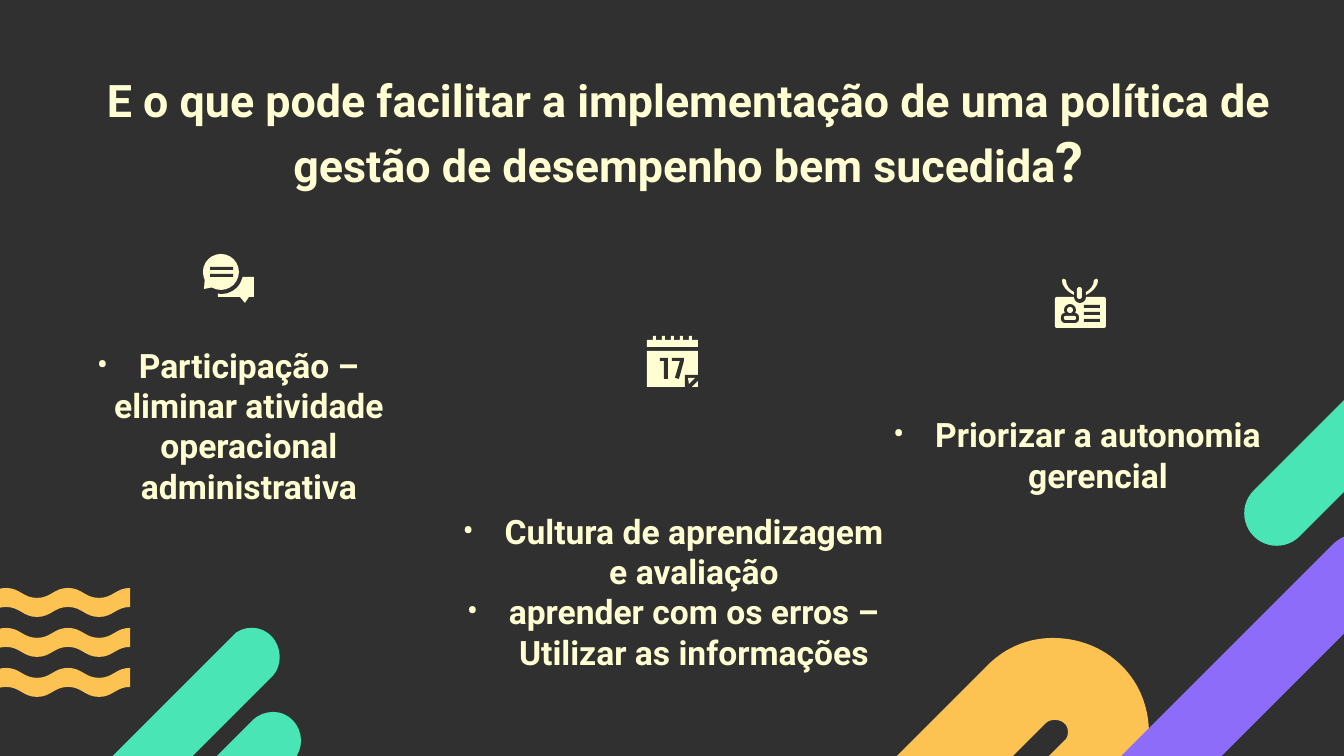
from dataclasses import dataclass

from lxml.etree import SubElement
from pptx import Presentation
from pptx.dml.color import RGBColor
from pptx.enum.shapes import MSO_SHAPE
from pptx.enum.text import MSO_ANCHOR, PP_ALIGN
from pptx.oxml.ns import qn
from pptx.util import Pt

EMU_PER_PX = 914400 / 134.4
DARK, CREAM = "303030", "FFFED2"
YELLOW, PURPLE, GREEN = "FCC353", "8D6CFA", "49E5B5"
FONT = "Roboto"
OVAL, ROUND = MSO_SHAPE.OVAL, MSO_SHAPE.ROUNDED_RECTANGLE
BAR = MSO_SHAPE.ROUND_2_SAME_RECTANGLE
Contour = list[tuple[int, ...]]


@dataclass
class Block:
    preset: MSO_SHAPE
    left: int
    top: int
    width: int
    height: int
    color: str = CREAM
    corner: float | None = None
    rotation: int = 0


@dataclass
class Outline:
    contours: list[Contour]
    color: str = CREAM
    left: int = 0
    top: int = 0
    scale: float = 1


@dataclass
class TextBlock:
    left: int
    top: int
    width: int
    height: int
    paragraphs: list[str]


def rectangle(left: int, top: int, width: int, height: int) -> Contour:
    right, bottom = left + width, top + height
    return [(left, top), (right, top), (right, bottom), (left, bottom)]


def wave() -> Contour:
    half, drop, thickness = 31, 10, 19
    segments = [(0, 0)]
    for step in range(6):
        start, end = (0, drop) if step % 2 == 0 else (drop, 0)
        x = step * half
        segments.append((x + 14, start, x + 17, end, x + half, end))
    segments.append((6 * half, thickness))
    for step in reversed(range(6)):
        end, start = (0, drop) if step % 2 == 0 else (drop, 0)
        x = step * half
        segments.append((x + 17, thickness + start, x + 14, thickness + end,
                         x, thickness + end))
    return segments


HOOK = [
    (-168, 264), (-157, 264, -146, 260, -140, 252),
    (215, -103), (233, -120, 243, -144, 242, -169),
    (242, -194, 233, -218, 215, -236), (196, -255, 171, -264, 146, -264),
    (122, -264, 99, -255, 81, -237), (-228, 72),
    (-243, 88, -243, 114, -227, 130), (-219, 138, -210, 142, -199, 142),
    (-188, 142, -177, 138, -169, 130), (138, -178),
    (141, -181, 144, -182, 148, -182), (151, -182, 155, -181, 157, -179),
    (160, -177, 161, -173, 161, -170), (161, -166, 160, -163, 157, -161),
    (-198, 194), (-212, 209, -212, 236, -196, 252),
    (-188, 260, -179, 264, -168, 264),
]
STRAPS = [
    [(side * -18, 2), (side * -18, 6, side * -14, 12, side * -6, 16),
     (side * -6, 13), (side * -10, 11, side * -14, 7, side * -14, 1),
     (side * -15, -1, side * -18, -1, side * -18, 2)]
    for side in (1, -1)
]
DIGIT_ONE = [(660, 358), (668, 358), (668, 379), (664, 379), (664, 361), (660, 361)]
DIGIT_SEVEN = [(672, 358), (684, 358), (684, 361), (679, 379),
               (675, 378), (680, 361), (672, 361)]

BACKGROUND = [
    Outline([HOOK], YELLOW, 907, 902),
    Block(BAR, 1188, 478, 71, 452, PURPLE, 0.5, 45),
    Block(BAR, 1293, 363, 65, 203, GREEN, 0.5, 225),
    *[Outline([wave()], YELLOW, -56, 588 + 40 * row) for row in range(3)],
    Outline([HOOK], GREEN, 136, 810, -0.69),
]
BADGE_ICON = [
    Block(ROUND, 1055, 297, 51, 31, corner=0.06),
    Block(ROUND, 1074, 290, 12, 13, DARK, 0.5),
    Block(ROUND, 1077, 287, 5, 12, corner=0.5),
    Outline(STRAPS, CREAM, 1080, 279),
    Block(ROUND, 1061, 313, 18, 10, DARK, 0.4),
    Block(OVAL, 1064, 304, 12, 12, DARK),
    Block(OVAL, 1067, 307, 6, 6),
    Block(ROUND, 1064, 316, 12, 4, corner=0.4),
    Outline([rectangle(1084, 305 + 7 * row, 16, 3) for row in range(3)], DARK),
]
CALENDAR_ICON = [
    Outline([rectangle(647, 340, 51, 7), rectangle(647, 351, 51, 36),
             *[rectangle(653 + 9 * ring, 336, 3, 4) for ring in range(5)]]),
    Outline([DIGIT_ONE, DIGIT_SEVEN, rectangle(685, 375, 13, 12)], DARK),
    Outline([[(688, 378), (695, 378), (689, 384)],
             [(698, 381), (698, 387), (692, 387)]]),
]
CHAT_ICON = [
    Outline([[(218, 277), (254, 277), (254, 297), (249, 297),
              (245, 303), (240, 297), (218, 297)]]),
    Block(OVAL, 200, 250, 43, 44, DARK),
    Block(OVAL, 203, 254, 36, 36),
    Outline([[(205, 277), (204, 289), (214, 287)]]),
    Outline([rectangle(210, top, 23, 3) for top in (267, 274)], DARK),
]
TOPICS = [
    TextBlock(30, 245, 396, 274,
              ["Participação – eliminar atividade operacional administrativa"]),
    TextBlock(445, 423, 456, 262,
              ["Cultura de aprendizagem e avaliação",
               "aprender com os erros – Utilizar as informações"]),
    TextBlock(879, 367, 396, 141, ["Priorizar a autonomia gerencial"]),
]


def px(value: float) -> int:
    return round(value * EMU_PER_PX)


def rgb(color: str) -> RGBColor:
    return RGBColor.from_string(color)


def paint(shape, color: str) -> None:
    shape.shadow.inherit = False
    shape.fill.solid()
    shape.fill.fore_color.rgb = rgb(color)
    shape.line.fill.background()


def draw_block(slide, block: Block) -> None:
    shape = slide.shapes.add_shape(block.preset, px(block.left), px(block.top),
                                   px(block.width), px(block.height))
    if block.corner is not None:
        shape.adjustments[0] = block.corner
    shape.rotation = block.rotation
    paint(shape, block.color)


def draw_outline(slide, outline: Outline) -> None:
    def place(x: float, y: float) -> tuple[int, int]:
        return px(outline.left + x * outline.scale), px(outline.top + y * outline.scale)

    builder = slide.shapes.build_freeform(*place(*outline.contours[0][0]))
    for index, contour in enumerate(outline.contours):
        if index:
            builder.move_to(*place(*contour[0]))
        builder.add_line_segments([place(*segment[-2:]) for segment in contour[1:]])
    shape = builder.convert_to_shape()
    segments = [segment for contour in outline.contours for segment in contour[1:]]
    for line, segment in zip(list(shape._element.iter(qn("a:lnTo"))), segments):
        if len(segment) == 6:
            line.tag = qn("a:cubicBezTo")
            end_point = line[0]
            for x, y in (segment[:2], segment[2:4]):
                control_x, control_y = place(x, y)
                control = SubElement(line, qn("a:pt"))
                control.set("x", str(control_x - shape.left))
                control.set("y", str(control_y - shape.top))
            line.append(end_point)
    paint(shape, outline.color)


def draw_all(slide, parts: list[Block | Outline]) -> None:
    for part in parts:
        if isinstance(part, Block):
            draw_block(slide, part)
        else:
            draw_outline(slide, part)


def add_bullet(paragraph) -> None:
    properties = paragraph._p.get_or_add_pPr()
    properties.set("marL", str(px(42)))
    properties.set("indent", str(-px(42)))
    color = SubElement(properties, qn("a:buClr"))
    SubElement(color, qn("a:srgbClr")).set("val", CREAM)
    SubElement(properties, qn("a:buFont")).set("typeface", FONT)
    SubElement(properties, qn("a:buChar")).set("char", "•")


def format_run(run, size: int) -> None:
    run.font.name = FONT
    run.font.size = Pt(size)
    run.font.bold = True
    run.font.color.rgb = rgb(CREAM)


def add_text(slide, block: TextBlock, anchor: MSO_ANCHOR):
    frame = slide.shapes.add_textbox(px(block.left), px(block.top),
                                     px(block.width), px(block.height)).text_frame
    frame.text = "\n".join(block.paragraphs)
    frame.word_wrap = True
    frame.vertical_anchor = anchor
    frame.margin_left = frame.margin_right = px(13)
    frame.margin_top = frame.margin_bottom = px(13)
    for paragraph in frame.paragraphs:
        paragraph.alignment = PP_ALIGN.CENTER
    return frame


def add_topic(slide, topic: TextBlock) -> None:
    for paragraph in add_text(slide, topic, MSO_ANCHOR.BOTTOM).paragraphs:
        add_bullet(paragraph)
        format_run(paragraph.runs[0], 18)


def add_title(slide) -> None:
    title = TextBlock(66, 60, 1245, 188, [
        "E o que pode facilitar a implementação de uma política de "
        "gestão de desempenho bem sucedida"])
    paragraph = add_text(slide, title, MSO_ANCHOR.TOP).paragraphs[0]
    format_run(paragraph.runs[0], 24)
    question_mark = paragraph.add_run()
    question_mark.text = "?"
    format_run(question_mark, 30)


def main() -> None:
    presentation = Presentation()
    presentation.slide_width, presentation.slide_height = px(1344), px(756)
    slide = presentation.slides.add_slide(presentation.slide_layouts[6])
    slide.background.fill.solid()
    slide.background.fill.fore_color.rgb = rgb(DARK)
    draw_all(slide, BACKGROUND)
    for topic in TOPICS:
        add_topic(slide, topic)
    add_title(slide)
    draw_all(slide, BADGE_ICON + CALENDAR_ICON + CHAT_ICON)
    presentation.save("out.pptx")


if __name__ == "__main__":
    main()
